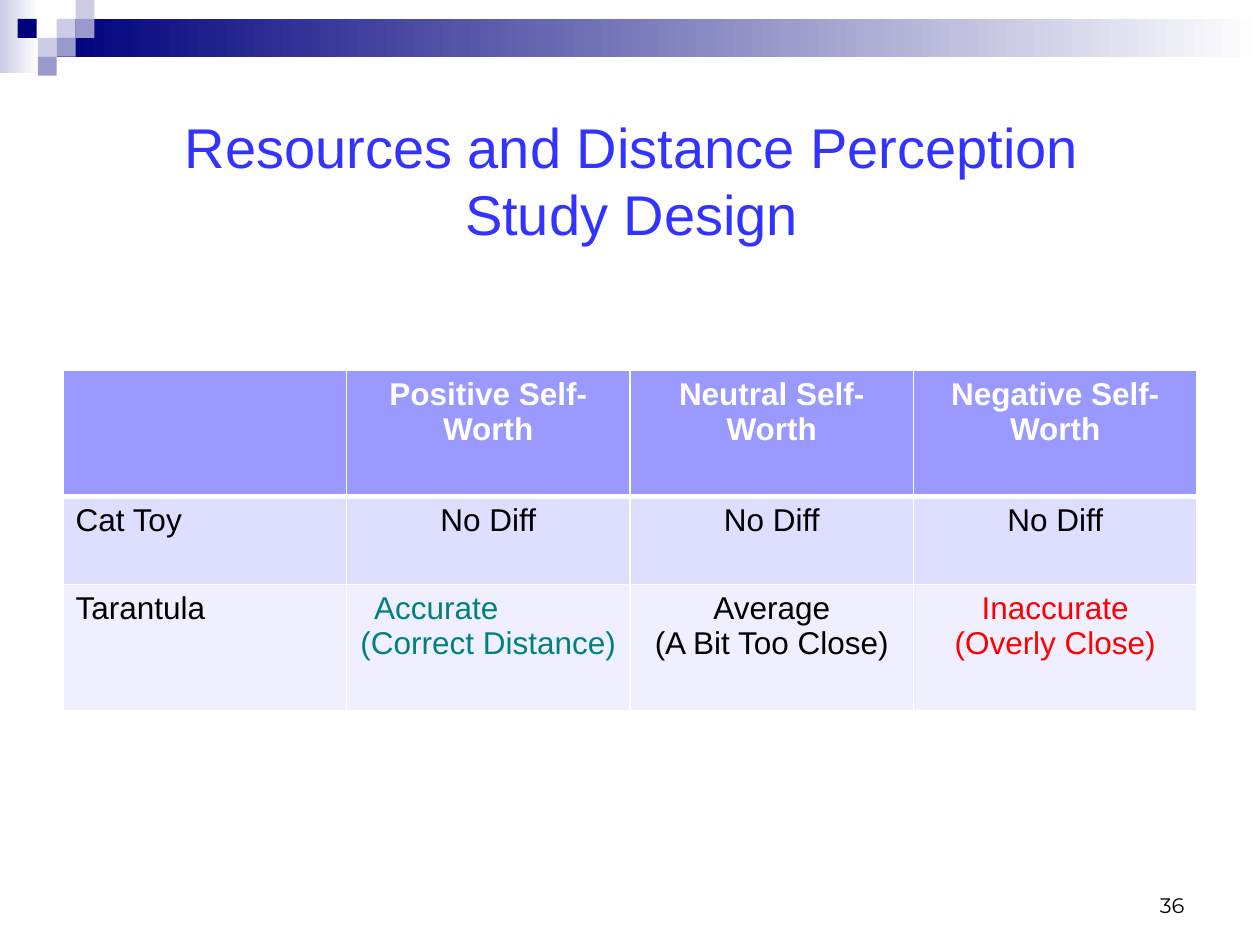
from lxml import etree
from pptx import Presentation
from pptx.dml.color import RGBColor
from pptx.enum.shapes import MSO_SHAPE
from pptx.enum.text import MSO_ANCHOR, PP_ALIGN
from pptx.oxml.ns import qn
from pptx.util import Inches, Pt

LEFT, CENTER, RIGHT = PP_ALIGN.LEFT, PP_ALIGN.CENTER, PP_ALIGN.RIGHT
TOP, BOTTOM = MSO_ANCHOR.TOP, MSO_ANCHOR.BOTTOM
RECTANGLE = MSO_SHAPE.RECTANGLE

COLORS = {
    "navy": "00007D", "pale": "CCCCE6", "mid": "9999CC", "white": "FFFFFF",
    "title": "3333FF", "black": "000000", "teal": "008080", "red": "FF0000",
    "header": "9999FF", "band1": "DEDEFF", "band2": "EFEFFF",
}


def color(name):
    return RGBColor.from_string(COLORS[name])


def write(paragraph, text, align, ink, size, font="Arial", bold=False):
    paragraph.alignment = align
    span = paragraph.add_run()
    span.text = text
    for name, value in {"name": font, "size": Pt(size), "bold": bold}.items():
        setattr(span.font, name, value)
    span.font.color.rgb = color(ink)


deck = Presentation()
deck.slide_width, deck.slide_height = Inches(10), Inches(7.5)
page = deck.slides.add_slide(deck.slide_layouts[5])

# Header decoration: left, top, width, height, colours (two make a gradient)
SQUARE = 0.15
decoration = [
    (0, 0, 0.31, 0.58, ("pale", "white")),
    (0.45, 0.15, 9.55, 0.3, ("navy", "white")),
]
for left, top, fill in [
    (0.45, 0.15, "pale"), (0.6, 0, "pale"), (0.6, 0.15, "mid"), (0.3, 0.3, "pale"),
    (0.14, 0.15, "navy"), (0.45, 0.3, "mid"), (0.3, 0.45, "mid"),
]:
    decoration.append((left, top, SQUARE, SQUARE, (fill,)))

for *bounds, fills in decoration:
    block = page.shapes.add_shape(RECTANGLE, *map(Inches, bounds))
    block.shadow.inherit = False
    block.line.fill.background()
    if len(fills) == 1:
        block.fill.solid()
        block.fill.fore_color.rgb = color(fills[0])
    else:
        block.fill.gradient()
        block.fill.gradient_angle = 0
        for stop, name, position in zip(block.fill.gradient_stops, fills, (0, 1)):
            stop.color.rgb = color(name)
            stop.position = position

# Slide number
number = page.shapes.add_textbox(Inches(7.17), Inches(6.83), Inches(2.33), Inches(0.5))
number.text_frame.word_wrap = True
number.text_frame.vertical_anchor = BOTTOM
write(number.text_frame.paragraphs[0], "36", RIGHT, "black", 12, "Montserrat")

# Title
title = page.shapes.title
title.left, title.top = Inches(1.12), Inches(0.84)
title.width, title.height = Inches(7.79), Inches(1.18)
title.text_frame.word_wrap = True
title.text_frame.vertical_anchor = TOP
write(title.text_frame.paragraphs[0],
      "Resources and Distance Perception Study Design", CENTER, "title", 32)

# Study design table: each cell is its lines and ink
rows = [
    (1.0, "header", [([], "white"), (["Positive Self-Worth"], "white"),
                     (["Neutral Self-Worth"], "white"), (["Negative Self-Worth"], "white")]),
    (0.7, "band1", [(["Cat Toy"], "black")] + [(["No Diff"], "black")] * 3),
    (1.0, "band2", [(["Tarantula"], "black"),
                    (["Accurate", "(Correct Distance)"], "teal"),
                    (["Average", "(A Bit Too Close)"], "black"),
                    (["Inaccurate", "(Overly Close)"], "red")]),
]
table = page.shapes.add_table(3, 4, Inches(0.5), Inches(2.94), Inches(9), Inches(2.7)).table
for column in table.columns:
    column.width = Inches(2.25)

for r, (height, fill, cells) in enumerate(rows):
    table.rows[r].height = Inches(height)
    for c, (lines, ink) in enumerate(cells):
        cell = table.cell(r, c)
        properties = cell._tc.get_or_add_tcPr()
        widths = {"a:lnL": 1, "a:lnR": 1, "a:lnT": 3 if r == 1 else 1,
                  "a:lnB": 3 if r == 0 else 1}
        for tag, width in widths.items():
            border = etree.SubElement(properties, qn(tag), w=str(Pt(width)))
            solid = etree.SubElement(border, qn("a:solidFill"))
            etree.SubElement(solid, qn("a:srgbClr"), val=COLORS["white"])
        cell.fill.solid()
        cell.fill.fore_color.rgb = color(fill)
        for i, line in enumerate(lines):
            frame = cell.text_frame
            para = frame.paragraphs[0] if i == 0 else frame.add_paragraph()
            write(para, line, CENTER if c else LEFT, ink, 18, bold=r == 0)

# "Accurate" sits near the left edge of its cell
accurate = table.cell(2, 1).text_frame.paragraphs[0]
accurate.alignment = LEFT
accurate._p.get_or_add_pPr().set("marL", str(Inches(0.12)))

deck.save("out.pptx")
